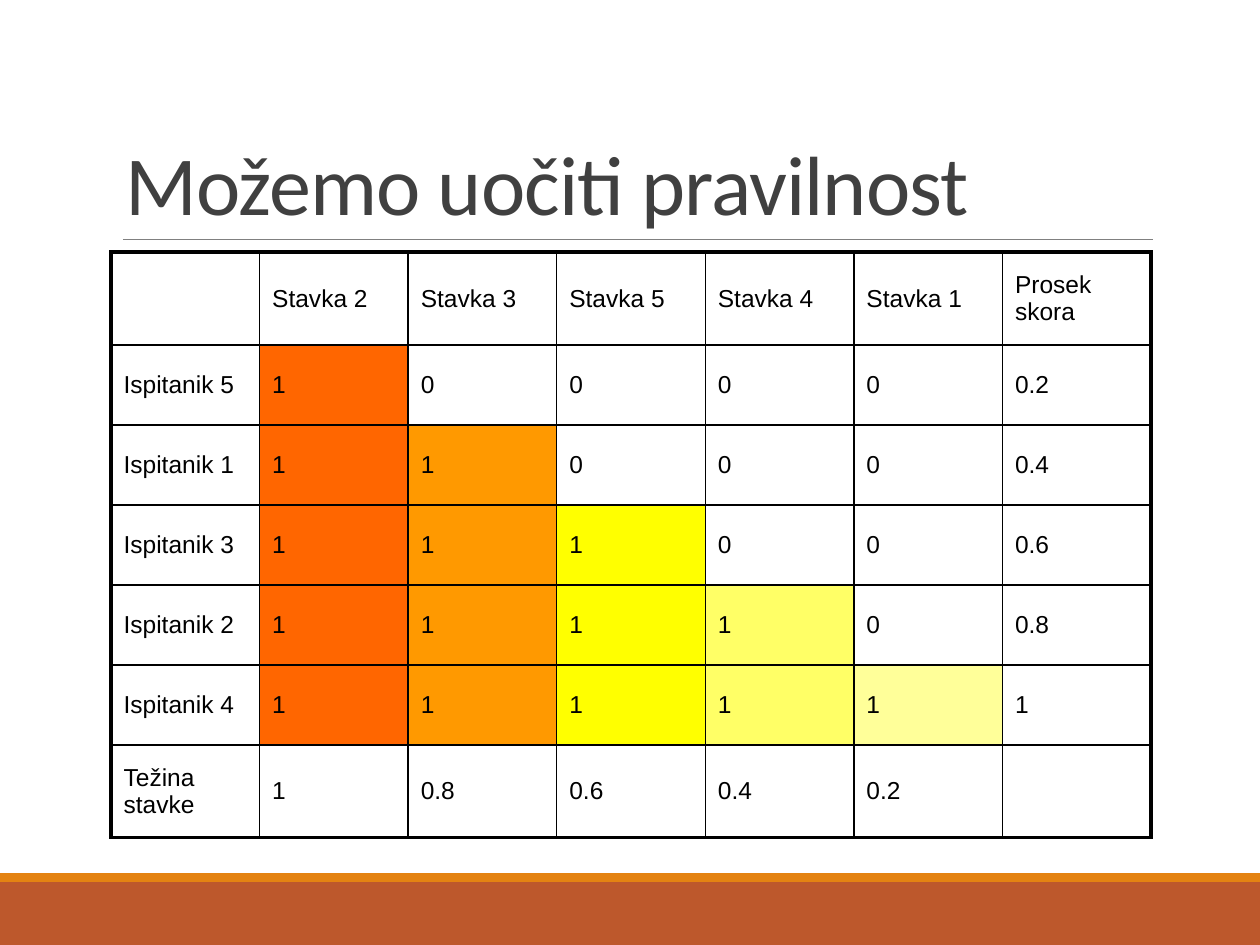
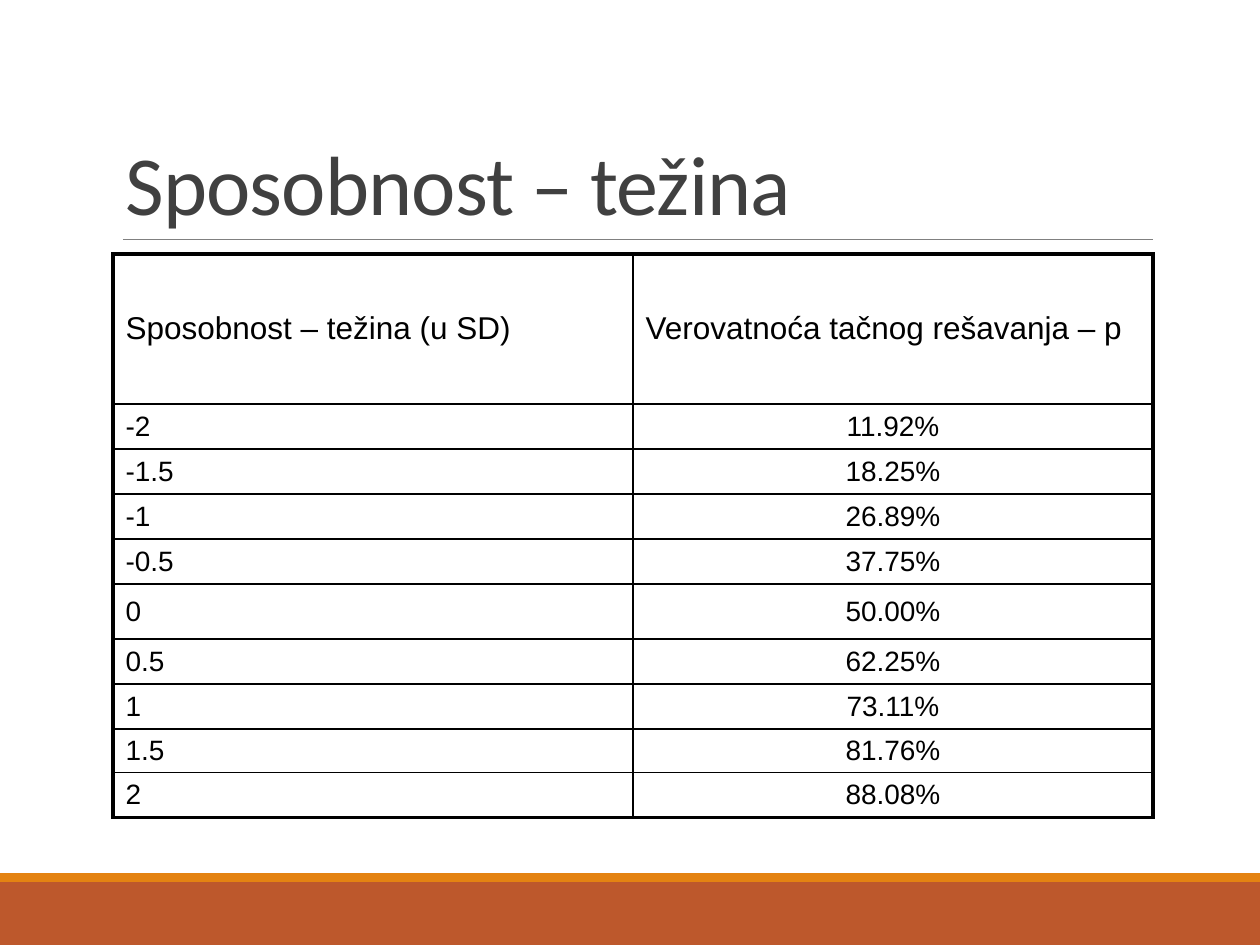
from dataclasses import dataclass

from pptx import Presentation
from pptx.dml.color import RGBColor
from pptx.enum.shapes import MSO_CONNECTOR, MSO_SHAPE
from pptx.enum.text import MSO_ANCHOR, MSO_AUTO_SIZE, PP_ALIGN
from pptx.oxml.ns import qn
from pptx.util import Emu, Pt
from lxml.etree import SubElement

PX_PER_INCH = 126
SLIDE_WIDTH, SLIDE_HEIGHT = 1260, 945
TITLE_ONLY = 5


@dataclass(frozen=True)
class Theme:
    title_font: str = "Calibri"
    table_font: str = "Arial"
    title_size: int = 48
    scores_size: int = 14
    header_size: int = 18
    probability_size: int = 16
    title: str = "404040"
    text: str = "000000"
    border: str = "000000"
    rule: str = "808080"
    band: str = "BD582C"
    band_edge: str = "E48312"
    white: str = "FFFFFF"
    solved: tuple = ("FF6600", "FF9900", "FFFF00", "FFFF66", "FFFF99")
    outer_border: float = 2.25
    inner_border: float = 1


THEME = Theme()

SCORES = [
    ["", "Stavka 2", "Stavka 3", "Stavka 5", "Stavka 4", "Stavka 1", "Prosek skora"],
    ["Ispitanik 5", "1", "0", "0", "0", "0", "0.2"],
    ["Ispitanik 1", "1", "1", "0", "0", "0", "0.4"],
    ["Ispitanik 3", "1", "1", "1", "0", "0", "0.6"],
    ["Ispitanik 2", "1", "1", "1", "1", "0", "0.8"],
    ["Ispitanik 4", "1", "1", "1", "1", "1", "1"],
    ["Težina stavke", "1", "0.8", "0.6", "0.4", "0.2", ""],
]

PROBABILITIES = [
    ["Sposobnost – težina (u SD)", "Verovatnoća tačnog rešavanja – p"],
    ["-2", "11.92%"],
    ["-1.5", "18.25%"],
    ["-1", "26.89%"],
    ["-0.5", "37.75%"],
    ["0", "50.00%"],
    ["0.5", "62.25%"],
    ["1", "73.11%"],
    ["1.5", "81.76%"],
    ["2", "88.08%"],
]


def px(length):
    return Emu(round(length * 914400 / PX_PER_INCH))


def rgb(color):
    return RGBColor.from_string(color)


def write(frame, text, *, font, size, color, align=PP_ALIGN.LEFT,
          line_spacing=None, tracking=None):
    """Put one formatted run in a text frame; tracking is in points."""
    paragraph = frame.paragraphs[0]
    paragraph.alignment = align
    if line_spacing:
        paragraph.line_spacing = line_spacing
    run = paragraph.add_run()
    run.text = text
    run.font.name = font
    run.font.size = Pt(size)
    run.font.color.rgb = rgb(color)
    if tracking:
        run.font._element.set("spc", str(round(tracking * 100)))


def add_band(slide, top, height, color):
    band = slide.shapes.add_shape(
        MSO_SHAPE.RECTANGLE, 0, px(top), px(SLIDE_WIDTH), px(height))
    band.shadow.inherit = False
    band.fill.solid()
    band.fill.fore_color.rgb = rgb(color)
    band.line.fill.background()


def add_rule(slide, left, right, y):
    rule = slide.shapes.add_connector(
        MSO_CONNECTOR.STRAIGHT, px(left), px(y), px(right), px(y))
    rule.line.color.rgb = rgb(THEME.rule)
    rule.line.width = Pt(0.5)
    SubElement(rule._element.spPr, qn("a:effectLst"))


def set_title(slide, text):
    title = slide.shapes.title
    title.left, title.top = px(113), px(39)
    title.width, title.height = px(1040), px(200)
    frame = title.text_frame
    frame.auto_size = MSO_AUTO_SIZE.NONE
    frame.vertical_anchor = MSO_ANCHOR.BOTTOM
    write(frame, text, font=THEME.title_font, size=THEME.title_size,
          color=THEME.title, line_spacing=0.85, tracking=-0.5)


def add_titled_slide(deck, title):
    slide = deck.slides.add_slide(deck.slide_layouts[TITLE_ONLY])
    add_band(slide, 882, 63, THEME.band)
    add_band(slide, 873, 9, THEME.band_edge)
    add_rule(slide, 123, 1153, 239)
    set_title(slide, title)
    return slide


def set_borders(cell, outer_sides):
    """Draw all four sides, thicker where the side is on the table's edge."""
    properties = cell._tc.get_or_add_tcPr()
    for side in "LRTB":
        width = THEME.outer_border if side in outer_sides else THEME.inner_border
        border = SubElement(properties, qn(f"a:ln{side}"), w=str(Pt(width)))
        fill = SubElement(border, qn("a:solidFill"))
        SubElement(fill, qn("a:srgbClr"), val=THEME.border)


def add_grid(slide, rows, left, top, width, row_heights, cell_style):
    """Add a table; cell_style(row, column, text) gives fill, size and align."""
    last_row, last_column = len(rows) - 1, len(rows[0]) - 1
    table = slide.shapes.add_table(
        len(rows), len(rows[0]), px(left), px(top), px(width),
        px(sum(row_heights))).table
    table.first_row = table.horz_banding = False
    for table_row, height in zip(table.rows, row_heights):
        table_row.height = px(height)
    for r, row in enumerate(rows):
        for c, text in enumerate(row):
            cell = table.cell(r, c)
            cell.vertical_anchor = MSO_ANCHOR.MIDDLE
            edges = {"L": c == 0, "R": c == last_column,
                     "T": r == 0, "B": r == last_row}
            set_borders(cell, [side for side, outer in edges.items() if outer])
            fill, size, align = cell_style(r, c, text)
            if fill:
                cell.fill.solid()
                cell.fill.fore_color.rgb = rgb(fill)
            else:
                cell.fill.background()
            if text:
                write(cell.text_frame, text, font=THEME.table_font, size=size,
                      color=THEME.text, align=align)


def score_style(row, column, text):
    """Colour each solved item by its column."""
    is_answer = 1 <= row <= 5 and 1 <= column <= 5
    fill = THEME.solved[column - 1] if is_answer and text == "1" else None
    return fill, THEME.scores_size, PP_ALIGN.LEFT


def probability_style(row, column, text):
    if row == 0:
        return None, THEME.header_size, PP_ALIGN.LEFT
    align = PP_ALIGN.CENTER if column == 1 else PP_ALIGN.LEFT
    return THEME.white, THEME.probability_size, align


def main():
    deck = Presentation()
    deck.slide_width, deck.slide_height = px(SLIDE_WIDTH), px(SLIDE_HEIGHT)

    pattern = add_titled_slide(deck, "Možemo uočiti pravilnost")
    add_grid(pattern, SCORES, 111, 252, 1040,
             [93] + [80] * 5 + [93], score_style)

    ability = add_titled_slide(deck, "Sposobnost – težina")
    add_grid(ability, PROBABILITIES, 113, 254, 1040,
             [150] + [45] * 4 + [55] + [45] * 2 + [40, 45], probability_style)

    deck.save("out.pptx")


if __name__ == "__main__":
    main()
